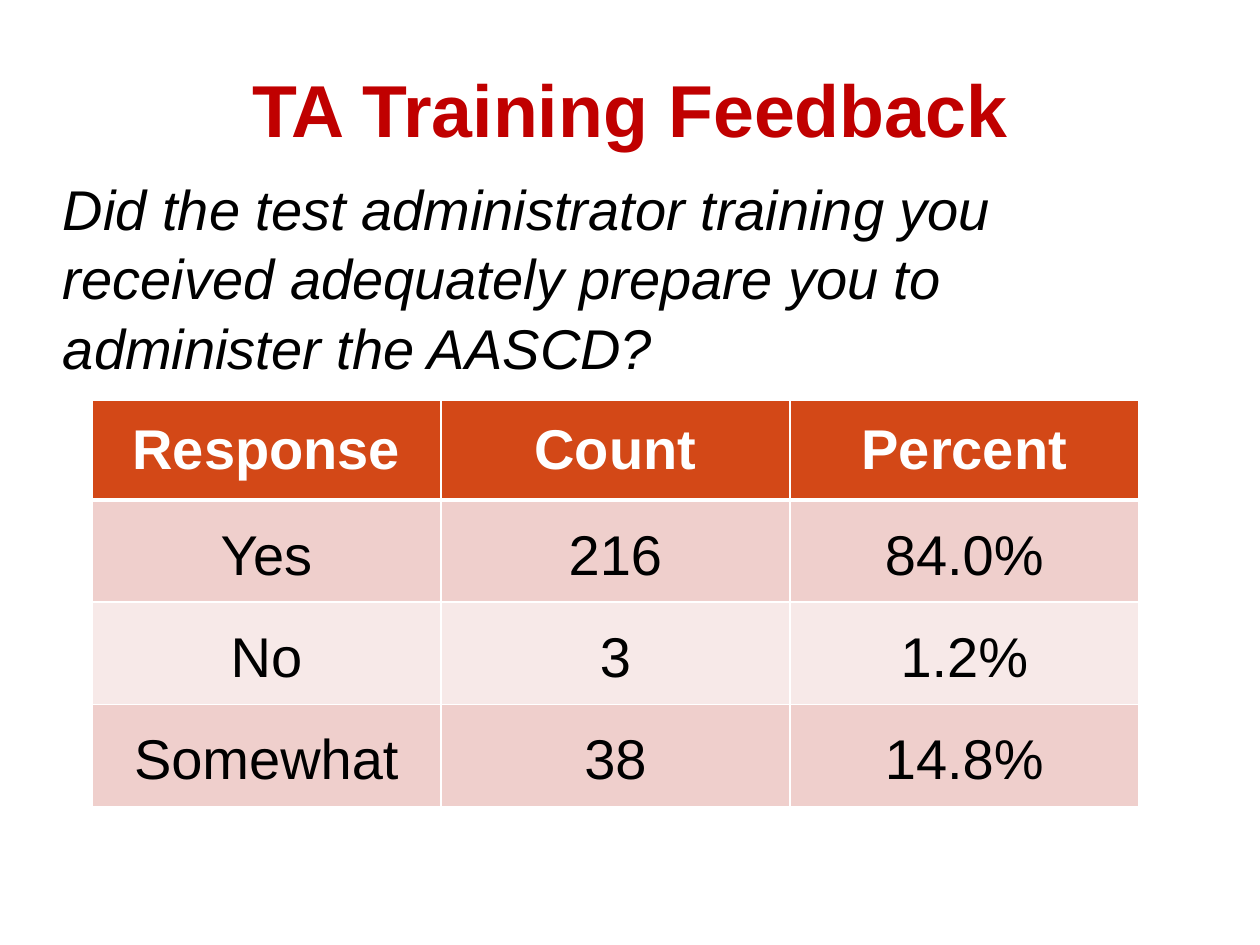
from lxml.etree import SubElement
from pptx import Presentation
from pptx.dml.color import RGBColor
from pptx.enum.text import MSO_ANCHOR, MSO_AUTO_SIZE, PP_ALIGN
from pptx.oxml.ns import qn
from pptx.util import Inches, Pt

COLORS = {
    "title": "C00000",
    "text": "000000",
    "white": "FFFFFF",
    "header": "D34817",
    "odd_row": "EFCFCC",
    "even_row": "F7E9E8",
}
RESPONSES = [
    ("Response", "Count", "Percent"),
    ("Yes", "216", "84.0%"),
    ("No", "3", "1.2%"),
    ("Somewhat", "38", "14.8%"),
]


def write(frame, text, align, color, size=32, bold=False, italic=False, spacing=1.0):
    paragraph = frame.paragraphs[0]
    paragraph.alignment = align
    paragraph.line_spacing = spacing
    run = paragraph.add_run()
    run.text = text
    font_format = {"name": "Arial", "size": Pt(size), "bold": bold, "italic": italic}
    for attribute, value in font_format.items():
        setattr(run.font, attribute, value)
    run.font.color.rgb = RGBColor.from_string(COLORS[color])


def add_borders(cell, bottom_width):
    properties = cell._tc.get_or_add_tcPr()
    widths = {"lnL": 1, "lnR": 1, "lnT": 1, "lnB": bottom_width}
    for position, (side, width) in enumerate(widths.items()):
        line = SubElement(properties, qn(f"a:{side}"), w=str(Pt(width)))
        fill = SubElement(line, qn("a:solidFill"))
        SubElement(fill, qn("a:srgbClr"), val=COLORS["white"])
        properties.insert(position, line)


prs = Presentation()
prs.slide_width, prs.slide_height = Inches(10), Inches(7.5)
slide = prs.slides.add_slide(prs.slide_layouts[5])

title = slide.shapes.title
title_box = {"left": 0.5, "top": 0.5, "width": 9, "height": 0.71}
for attribute, value in title_box.items():
    setattr(title, attribute, Inches(value))
question = slide.shapes.add_textbox(Inches(0.5), Inches(1.37), Inches(9), Inches(1.65))

frame_format = {
    "margin_left": 0,
    "margin_top": 0,
    "margin_right": 0,
    "margin_bottom": 0,
    "word_wrap": True,
    "auto_size": MSO_AUTO_SIZE.NONE,
}
for frame in (title.text_frame, question.text_frame):
    for attribute, value in frame_format.items():
        setattr(frame, attribute, value)
title.text_frame.vertical_anchor = MSO_ANCHOR.BOTTOM
question.text_frame.vertical_anchor = MSO_ANCHOR.TOP

write(title.text_frame, "TA Training Feedback", PP_ALIGN.CENTER, "title", size=42, bold=True)
write(
    question.text_frame,
    "Did the test administrator training you received adequately prepare you to administer the AASCD?",
    PP_ALIGN.LEFT,
    "text",
    italic=True,
    spacing=1.03,
)

feedback = slide.shapes.add_table(
    len(RESPONSES), 3, Inches(0.73), Inches(3.18), Inches(8.31), Inches(3.22)
).table
for column in feedback.columns:
    column.width = Inches(2.77)

for row_index, response in enumerate(RESPONSES):
    is_header = row_index == 0
    feedback.rows[row_index].height = Inches(0.79 if is_header else 0.81)
    row_color = "header" if is_header else "odd_row" if row_index % 2 else "even_row"
    side_margin, end_margin = (0.09, 0.05) if is_header else (0.03, 0.03)
    cell_format = {
        "margin_left": Inches(side_margin),
        "margin_right": Inches(side_margin),
        "margin_top": Inches(end_margin),
        "margin_bottom": Inches(end_margin),
        "vertical_anchor": MSO_ANCHOR.MIDDLE,
    }
    for column_index, text in enumerate(response):
        cell = feedback.cell(row_index, column_index)
        for attribute, value in cell_format.items():
            setattr(cell, attribute, value)
        cell.fill.solid()
        cell.fill.fore_color.rgb = RGBColor.from_string(COLORS[row_color])
        add_borders(cell, 3 if is_header else 1)
        write(
            cell.text_frame,
            text,
            PP_ALIGN.CENTER,
            "white" if is_header else "text",
            bold=is_header,
            spacing=1.0 if is_header else 1.15,
        )

prs.save("out.pptx")
